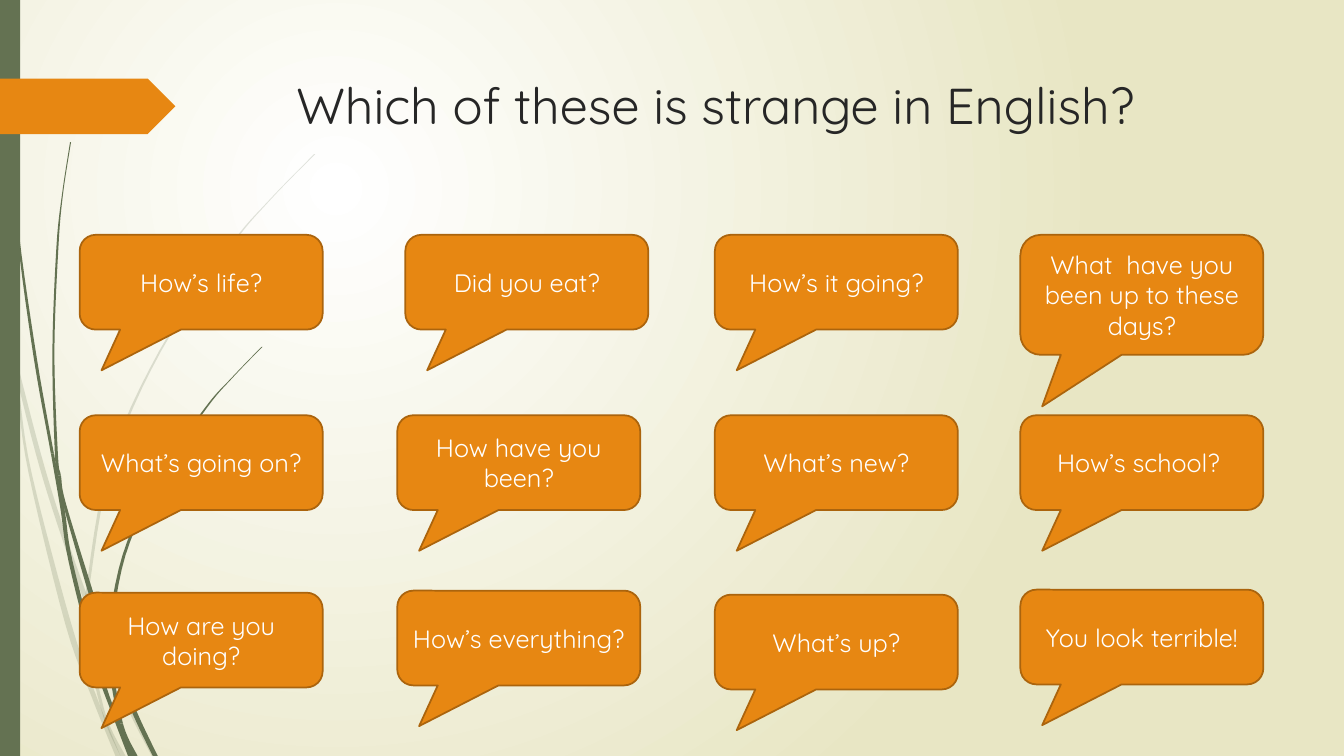
from lxml import etree
from pptx import Presentation
from pptx.dml.color import RGBColor as RGB
from pptx.enum.shapes import MSO_SHAPE as SHAPE
from pptx.enum.text import MSO_ANCHOR as ANCHOR, PP_ALIGN as ALIGN
from pptx.oxml.ns import qn
from pptx.util import Pt

PX = 9144  # EMU per px, 100 px to the inch
WIDTH, HEIGHT = 1333, 750
FONT = "Quicksand"
COLORS = {
    "white": "FFFFFF",
    "sand": "E8E6C4",
    "green": "647252",
    "orange": "E78712",
    "brown": "AB640D",
    "title": "262626",
}

# Blades of grass: heights of the joints, then points (centre x, y, width)
PALE_BLADES = [
    ((347, 599),
     [(0, 290, 3), (12, 347, 4), (38, 450, 5), (60, 522, 5), (87, 599, 5),
      (125, 694, 5), (153, 750, 5)]),
    ((693,),
     [(12, 350, 1), (18, 390, 2), (30, 470, 3), (68, 620, 6), (94, 693, 5),
      (117, 750, 5)]),
    ((584, 610, 711),
     [(312, 153, 1), (268, 198, 1), (228, 245, 2), (159, 348, 2), (109, 462, 3),
      (87, 584, 3), (86, 610, 4), (89, 646, 4), (104, 711, 3), (122, 750, 5)]),
]
DARK_BLADES = [
    ((450, 505, 708),
     [(4, 0, 1), (4, 48, 1), (7, 110, 1), (18, 233, 2), (35, 355, 3),
      (52, 450, 3), (62, 505, 4), (70, 557, 4), (96, 658, 5), (113, 708, 4),
      (130, 750, 6)]),
    ((472, 645),
     [(70, 141, 1), (62, 193, 1), (57, 245, 2), (53, 349, 2), (56, 451, 3),
      (59, 472, 3), (64, 500, 3), (91, 591, 5), (108, 645, 5), (134, 708, 5),
      (154, 750, 5)]),
    ((632, 656, 718),
     [(260, 344, 1), (231, 374, 1), (204, 405, 2), (157, 475, 3), (123, 551, 3),
      (108, 632, 4), (109, 656, 4), (120, 718, 4), (134, 750, 5)]),
]

CALLOUT_W, CALLOUT_H, TALL_CALLOUT_H = 241, 94, 119
CALLOUT_ADJUSTMENTS = (-0.41, 0.93, 0.17)
# Columns of greetings: (left, top, text)
GREETINGS = [
    (79, 233, "How’s life?"),
    (79, 412, "What’s going on?"),
    (79, 588, "How are you doing?"),
    (402, 233, "Did you eat?"),
    (394, 412, "How have you been?"),
    (394, 586, "How’s everything?"),
    (709, 233, "How’s it going?"),
    (709, 412, "What’s new?"),
    (709, 590, "What’s up?"),
    (1012, 412, "How’s school? "),
    (1012, 585, "You look terrible!"),
]


def rgb(name):
    return RGB.from_string(COLORS[name])


def px(*lengths):
    return [round(n * PX) for n in lengths]


def paint(sp, fill, line=None):
    sp.shadow.inherit = False
    sp.fill.solid()
    sp.fill.fore_color.rgb = rgb(fill)
    if line:
        sp.line.color.rgb = rgb(line)
        sp.line.width = Pt(1.25)
    else:
        sp.line.fill.background()


def add_run(tf, text, size, color, align):
    tf.word_wrap = True
    p = tf.paragraphs[0]
    p.alignment = align
    r = p.add_run()
    r.text = text
    r.font.name = FONT
    r.font.size = Pt(size)
    r.font.color.rgb = rgb(color)


def set_background(s):
    """Radial gradient with its centre in the upper left quarter."""
    fill = s.background.fill
    fill.gradient()
    for stop, name, position in zip(fill.gradient_stops, ("white", "sand"), (0, 1)):
        stop.color.rgb = rgb(name)
        stop.position = position
    lin = s.background._cSld.find(".//" + qn("a:lin"))
    radial = etree.Element(qn("a:path"), path="circle")
    etree.SubElement(radial, qn("a:fillToRect"),
                     l="50000", t="50000", r="100000", b="100000")
    lin.getparent().replace(lin, radial)


def smooth(points, steps=6):
    """Catmull-Rom curve through the points."""
    padded = [points[0], *points, points[-1]]
    curve = []
    for a, b, c, d in zip(padded, padded[1:], padded[2:], padded[3:]):
        for t in (i / steps for i in range(steps)):
            curve.append([
                (2 * q + (r - p) * t + (2 * p - 5 * q + 4 * r - u) * t ** 2
                 + (3 * q - p - 3 * r + u) * t ** 3) / 2
                for p, q, r, u in zip(a, b, c, d)])
    return curve + [points[-1]]


def add_stalk(s, curve, alpha):
    left = [px(x - w / 2, y) for x, y, w in curve]
    right = [px(x + w / 2, y) for x, y, w in curve]
    builder = s.shapes.build_freeform(*left[0], scale=1.0)
    builder.add_line_segments(left[1:] + right[::-1], close=True)
    sp = builder.convert_to_shape()
    paint(sp, "green")
    if alpha:
        color = sp._element.spPr.find(".//" + qn("a:srgbClr"))
        etree.SubElement(color, qn("a:alpha"), val=str(alpha * 1000))


def add_blade(s, joints, points, alpha=None):
    """One stalk between each pair of neighbouring joints."""
    curve = smooth(points)
    heights = [y for _, y, _ in curve]
    cuts = [0, *(heights.index(y) for y in joints), len(curve) - 1]
    for start, end in zip(cuts, cuts[1:]):
        add_stalk(s, curve[start:end + 1], alpha)


def add_title(s, text):
    tf = s.shapes.add_textbox(*px(284, 69, 975, 140)).text_frame
    add_run(tf, text, 36, "title", ALIGN.LEFT)


def add_callout(s, left, top, text, height=CALLOUT_H):
    sp = s.shapes.add_shape(SHAPE.ROUNDED_RECTANGULAR_CALLOUT,
                            *px(left, top, CALLOUT_W, height))
    for i, value in enumerate(CALLOUT_ADJUSTMENTS):
        sp.adjustments[i] = value
    paint(sp, "orange", "brown")
    sp.text_frame.vertical_anchor = ANCHOR.MIDDLE
    add_run(sp.text_frame, text, 18, "white", ALIGN.CENTER)


def main():
    prs = Presentation()
    prs.slide_width, prs.slide_height = px(WIDTH, HEIGHT)
    s = prs.slides.add_slide(prs.slide_layouts[6])
    set_background(s)
    for joints, points in PALE_BLADES:
        add_blade(s, joints, points, alpha=20)
    for joints, points in DARK_BLADES:
        add_blade(s, joints, points)
    paint(s.shapes.add_shape(SHAPE.RECTANGLE, *px(0, 0, 20, HEIGHT)), "green")
    paint(s.shapes.add_shape(SHAPE.PENTAGON, *px(0, 78, 174, 55)), "orange")
    add_title(s, "Which of these is strange in English?")
    for left, top, text in GREETINGS:
        add_callout(s, left, top, text)
    add_callout(s, 1012, 233, "What  have you been up to these days?", TALL_CALLOUT_H)
    prs.save("out.pptx")


if __name__ == "__main__":
    main()
